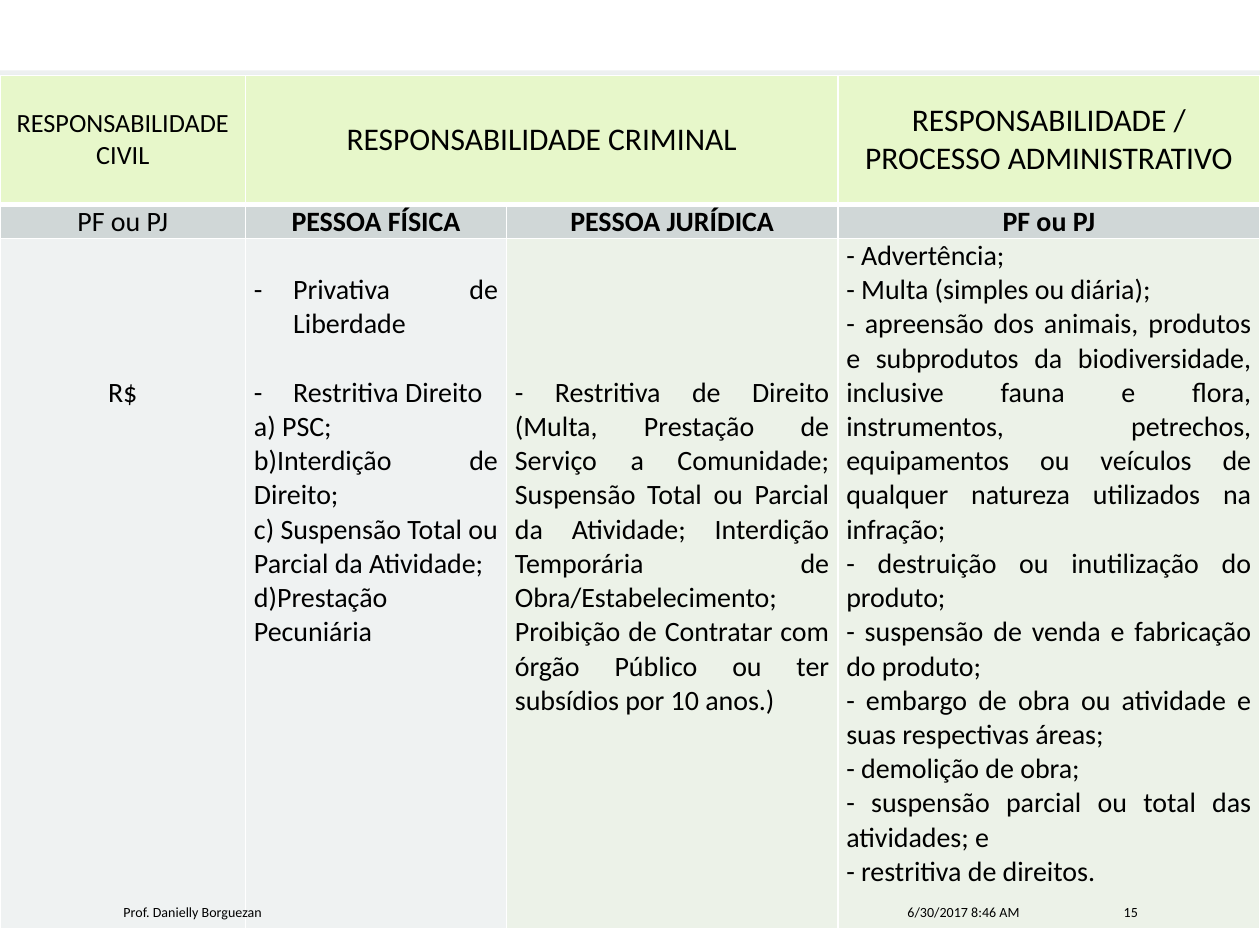
"""Build a slide with a table of civil, criminal and administrative liability."""
from lxml.etree import SubElement
from pptx import Presentation
from pptx.dml.color import RGBColor as RGB
from pptx.enum.shapes import MSO_SHAPE as SHAPE
from pptx.enum.text import MSO_ANCHOR as ANCHOR, PP_ALIGN as ALIGN
from pptx.oxml.ns import qn
from pptx.util import Cm, Pt

COLORS = {
    "text": "000000", "white": "FFFFFF", "band_top": "EFF2F2", "band_bottom": "B0BCBC",
    "header": "E7F7CA", "subject": "D0D7D7", "gray": "EFF2F2", "green": "ECF2E8",
}


def add_text(paragraph, text, size, align, bold=False):
    paragraph.alignment = align
    run = paragraph.add_run()
    run.text = text
    run.font.name = "Calibri"
    run.font.size = Pt(size)
    run.font.bold = bold
    run.font.color.rgb = RGB.from_string(COLORS["text"])


def style_cell(cell, color, bottom_width):
    cell.margin_left = cell.margin_right = Cm(0.17)
    cell.margin_top = cell.margin_bottom = 0
    properties = cell._tc.get_or_add_tcPr()
    for side, width in (("L", 1), ("R", 1), ("T", 1), ("B", bottom_width)):
        border = SubElement(properties, qn(f"a:ln{side}"), w=str(Pt(width)))
        fill = SubElement(border, qn("a:solidFill"))
        SubElement(fill, qn("a:srgbClr"), val=COLORS["white"])
    cell.fill.solid()
    cell.fill.fore_color.rgb = RGB.from_string(COLORS[color])


prs = Presentation()
prs.slide_width, prs.slide_height = Cm(25.4), Cm(19.05)
slide = prs.slides.add_slide(prs.slide_layouts[6])

for top, height, is_gradient in ((1.27, 3.53, True), (4.72, 0.15, False), (1.27, 0.15, False)):
    band = slide.shapes.add_shape(SHAPE.RECTANGLE, 0, Cm(top), Cm(25.4), Cm(height))
    band.shadow.inherit = False
    band.line.fill.background()
    if is_gradient:
        band.fill.gradient()
        band.fill.gradient_angle = 270
        for stop, name in zip(band.fill.gradient_stops, ("band_top", "band_bottom")):
            stop.color.rgb = RGB.from_string(COLORS[name])
    else:
        band.fill.solid()
        band.fill.fore_color.rgb = RGB.from_string(COLORS["white"])

widths = (4.95, 5.26, 6.68, 8.51)
heights = (2.6, 0.69, 13.92)
liability = slide.shapes.add_table(
    3, 4, 0, Cm(1.52), Cm(sum(widths)), Cm(sum(heights))).table
for column, width in zip(liability.columns, widths):
    column.width = Cm(width)
for row, height in zip(liability.rows, heights):
    row.height = Cm(height)

headers = (
    ("RESPONSABILIDADE CIVIL", 15),
    ("RESPONSABILIDADE CRIMINAL", 18),
    None,
    ("RESPONSABILIDADE / PROCESSO ADMINISTRATIVO", 18),
)
for index, header in enumerate(headers):
    cell = liability.cell(0, index)
    style_cell(cell, "header", 3)
    cell.vertical_anchor = ANCHOR.MIDDLE
    if header:
        add_text(cell.text_frame.paragraphs[0], *header, ALIGN.CENTER)
liability.cell(0, 1).merge(liability.cell(0, 2))

subjects = ("PF ou PJ", "PESSOA FÍSICA", "PESSOA JURÍDICA", "PF ou PJ")
for index, subject in enumerate(subjects):
    cell = liability.cell(1, index)
    style_cell(cell, "subject", 1)
    cell.vertical_anchor = ANCHOR.MIDDLE
    add_text(cell.text_frame.paragraphs[0], subject, 16, ALIGN.CENTER, bold=index > 0)

line_height = 0.69
bulleted = ("Privativa de Liberdade", "Restritiva Direito")
penalties = (
    ("gray", 4, ALIGN.CENTER, ("R$",)),
    ("gray", 1, ALIGN.JUSTIFY, (
        *bulleted,
        "a) PSC;",
        "b)Interdição de Direito;",
        "c) Suspensão Total ou Parcial da Atividade;",
        "d)Prestação Pecuniária",
    )),
    ("green", 4, ALIGN.JUSTIFY, (
        "- Restritiva de Direito (Multa, Prestação de Serviço a Comunidade; "
        "Suspensão Total ou Parcial da Atividade; Interdição Temporária de "
        "Obra/Estabelecimento; Proibição de Contratar com órgão Público ou ter "
        "subsídios por 10 anos.)",
    )),
    ("green", 0, ALIGN.JUSTIFY, (
        "- Advertência;",
        "- Multa (simples ou diária);",
        "- apreensão dos animais, produtos e subprodutos da biodiversidade, "
        "inclusive fauna e flora, instrumentos, petrechos, equipamentos ou "
        "veículos de qualquer natureza utilizados na infração;",
        "- destruição ou inutilização do produto;",
        "- suspensão de venda e fabricação do produto;",
        "- embargo de obra ou atividade e suas respectivas áreas;",
        "- demolição de obra;",
        "- suspensão parcial ou total das atividades; e",
        "- restritiva de direitos.",
    )),
)
for index, (color, lines_above, align, items) in enumerate(penalties):
    cell = liability.cell(2, index)
    style_cell(cell, color, 1)
    cell.margin_top = Cm(lines_above * line_height)
    frame = cell.text_frame
    for position, item in enumerate(items):
        paragraph = frame.add_paragraph() if position else frame.paragraphs[0]
        if item in bulleted:
            if position:
                paragraph.space_before = Cm(line_height)
            properties = paragraph._p.get_or_add_pPr()
            properties.set("marL", str(Cm(0.79)))
            properties.set("indent", str(-Cm(0.79)))
            SubElement(properties, qn("a:buFont"), typeface="Calibri")
            SubElement(properties, qn("a:buChar"), char="-")
        add_text(paragraph, item, 16, align)

footers = (
    ("6/30/2017 8:46 AM", 17.48, 3.33, ALIGN.RIGHT),
    ("Prof. Danielly Borguezan", 2.24, 14.76, ALIGN.LEFT),
    ("15", 21.29, 1.9, ALIGN.RIGHT),
)
for text, left, width, align in footers:
    footer = slide.shapes.add_textbox(Cm(left), Cm(18.11), Cm(width), Cm(0.56)).text_frame
    footer.word_wrap = True
    footer.vertical_anchor = ANCHOR.MIDDLE
    add_text(footer.paragraphs[0], text, 8, align)

prs.save("out.pptx")
